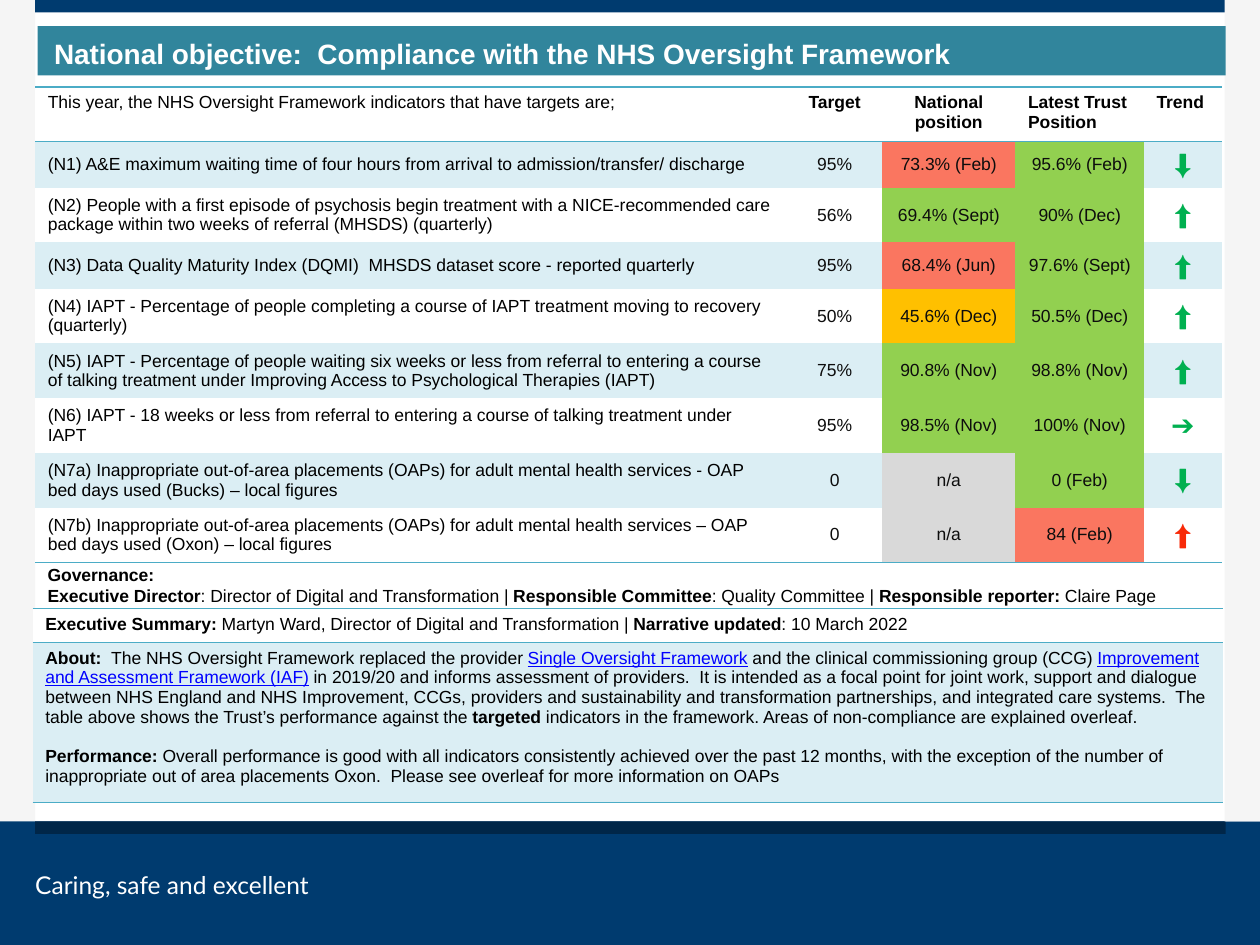
"""Build the oversight framework compliance slide with its indicator and summary tables."""
from lxml import etree
from pptx import Presentation
from pptx.dml.color import RGBColor
from pptx.enum.shapes import MSO_SHAPE
from pptx.enum.text import MSO_ANCHOR, PP_ALIGN
from pptx.oxml import parse_xml
from pptx.oxml.ns import nsdecls, qn
from pptx.util import Cm, Pt

RECTANGLE = MSO_SHAPE.RECTANGLE
TOP, MIDDLE = MSO_ANCHOR.TOP, MSO_ANCHOR.MIDDLE
LEFT, CENTER = PP_ALIGN.LEFT, PP_ALIGN.CENTER
NO_STYLE = "{2D5ABB26-0587-4C30-8999-92F81FD0307C}"

COLORS = {
    "white": "FFFFFF", "black": "000000", "ink": "0D0D0D", "side": "F5F5F5",
    "navy": "003B6F", "dark": "002648", "teal": "31859C", "rule": "4BACC6",
    "band": "DBEEF4", "red": "FA7660", "green": "92D050", "amber": "FFC000",
    "grey": "D9D9D9", "better": "00B050", "worse": "F82A08", "link": "0000FF",
}
FORMATS = {
    "plain": {"name": "Arial", "size": Pt(10), "bold": False, "color": "black"},
    "bold": {"name": "Arial", "size": Pt(10), "bold": True, "color": "black"},
    "value": {"name": "Arial", "size": Pt(10), "bold": False, "color": "ink"},
    "link": {"name": "Arial", "size": Pt(10), "underline": True, "color": "link"},
    "title": {"name": "Arial", "size": Pt(16), "bold": True, "color": "white"},
    "motto": {"name": "Lato", "size": Pt(14), "color": "white"},
    "better": {"name": "Arial", "size": Pt(16), "bold": True, "color": "better"},
    "worse": {"name": "Arial", "size": Pt(16), "bold": True, "color": "worse"},
}
FRAME = [
    ("side", 0, 0, 0.71, 16.56),
    ("navy", 0, 16.56, 25.4, 2.49),
    ("dark", 0.71, 16.56, 24, 0.25),
    ("navy", 0.71, 0, 24, 0.25),
    ("side", 24.69, 0, 0.71, 16.56),
]
TITLE = "National objective:  Compliance with the NHS Oversight Framework"
MOTTO = "Caring, safe and excellent"
HEADER = [
    ("This year, the NHS Oversight Framework indicators that have targets are;", "plain", LEFT),
    ("Target", "bold", CENTER),
    ("National position", "bold", CENTER),
    ("Latest Trust Position", "bold", LEFT),
    ("Trend", "bold", LEFT),
]
INDICATORS = [
    ("(N1) A&E maximum waiting time of four hours from arrival to admission/transfer/ discharge",
     "95%", "73.3% (Feb)", "red", "95.6% (Feb)", "green", "⬇", "better"),
    ("(N2) People with a first episode of psychosis begin treatment with a NICE-recommended care "
     "package within two weeks of referral (MHSDS) (quarterly)",
     "56%", "69.4% (Sept)", "green", "90% (Dec)", "green", "⬆", "better"),
    ("(N3) Data Quality Maturity Index (DQMI)  MHSDS dataset score - reported quarterly",
     "95%", "68.4% (Jun)", "red", "97.6% (Sept)", "green", "⬆", "better"),
    ("(N4) IAPT - Percentage of people completing a course of IAPT treatment moving to recovery "
     "(quarterly)",
     "50%", "45.6% (Dec)", "amber", "50.5% (Dec)", "green", "⬆", "better"),
    ("(N5) IAPT - Percentage of people waiting six weeks or less from referral to entering a course "
     "of talking treatment under Improving Access to Psychological Therapies (IAPT)",
     "75%", "90.8% (Nov)", "green", "98.8% (Nov)", "green", "⬆", "better"),
    ("(N6) IAPT - 18 weeks or less from referral to entering a course of talking treatment under IAPT",
     "95%", "98.5% (Nov)", "green", "100% (Nov)", "green", "➔", "better"),
    ("(N7a) Inappropriate out-of-area placements (OAPs) for adult mental health services - OAP "
     "bed days used (Bucks) – local figures",
     "0", "n/a", "grey", "0 (Feb)", "green", "⬇", "better"),
    ("(N7b) Inappropriate out-of-area placements (OAPs) for adult mental health services – OAP "
     "bed days used (Oxon) – local figures",
     "0", "n/a", "grey", "84 (Feb)", "red", "⬆", "worse"),
]
COLUMNS = [15.16, 1.91, 2.69, 2.59, 1.57]
ONE_LINE, TWO_LINES = 0.93, 1.1
GOVERNANCE = [
    [("Governance:", "bold")],
    [("Executive Director", "bold"), (": Director of Digital and Transformation | ", "plain"),
     ("Responsible Committee", "bold"), (": Quality Committee | ", "plain"),
     ("Responsible reporter: ", "bold"), ("Claire Page", "plain")],
]
SUMMARY = [
    [("Executive Summary: ", "bold"),
     ("Martyn Ward, Director of Digital and Transformation | ", "plain"),
     ("Narrative updated", "bold"), (": 10 March 2022", "plain")],
]
NARRATIVE = [
    [("About:  ", "bold"), ("The NHS Oversight Framework replaced the provider ", "plain"),
     ("Single Oversight Framework", "link"),
     (" and the clinical commissioning group (CCG) ", "plain"),
     ("Improvement and Assessment Framework (IAF)", "link"),
     (" in 2019/20 and informs assessment of providers.  It is intended as a focal point for joint "
      "work, support and dialogue between NHS England and NHS Improvement, CCGs, providers and "
      "sustainability and transformation partnerships, and integrated care systems.  The table "
      "above shows the Trust’s performance against the ", "plain"),
     ("targeted ", "bold"),
     ("indicators in the framework. Areas of non-compliance are explained overleaf.", "plain")],
    [("Performance: ", "bold"),
     ("Overall performance is good with all indicators consistently achieved over the past 12 "
      "months, with the exception of the number of inappropriate out of area placements Oxon.  "
      "Please see overleaf for more information on OAPs", "plain")],
]


def rgb(color):
    return RGBColor.from_string(COLORS[color])


def write(frame, paragraphs, align=LEFT, gap=0):
    for index, spans in enumerate(paragraphs):
        para = frame.add_paragraph() if index else frame.paragraphs[0]
        para.alignment = align
        if index and gap:
            para.space_before = Pt(gap)
        for text, style in spans:
            span = para.add_run()
            span.text = text
            for key, value in FORMATS[style].items():
                if key == "color":
                    span.font.color.rgb = rgb(value)
                else:
                    setattr(span.font, key, value)


def add_bar(page, color, *place):
    bar = page.shapes.add_shape(RECTANGLE, *map(Cm, place))
    bar.shadow.inherit = False
    bar.fill.solid()
    bar.fill.fore_color.rgb = rgb(color)
    bar.line.fill.background()
    return bar


def add_text(page, place, paragraphs, margin=None):
    box = page.shapes.add_textbox(*map(Cm, place))
    frame = box.text_frame
    frame.word_wrap = True
    if margin is not None:
        for side in ("left", "top", "right", "bottom"):
            setattr(frame, f"margin_{side}", Cm(margin))
    write(frame, paragraphs)


def add_grid(page, left, top, widths, heights):
    shape = page.shapes.add_table(len(heights), len(widths), Cm(left), Cm(top),
                                  Cm(sum(widths)), Cm(sum(heights)))
    grid = shape.table
    grid.first_row = grid.horz_banding = False
    grid._tbl.tblPr.find(qn("a:tableStyleId")).text = NO_STYLE
    for column, width in zip(grid.columns, widths):
        column.width = Cm(width)
    for row, height in zip(grid.rows, heights):
        row.height = Cm(height)
    return grid


def fill_cell(cell, paragraphs, color, rules=(), align=LEFT, anchor=TOP, gap=0):
    write(cell.text_frame, paragraphs, align, gap)
    cell.vertical_anchor = anchor
    cell.fill.solid()
    cell.fill.fore_color.rgb = rgb(color)
    properties = cell._tc.get_or_add_tcPr()
    for index, side in enumerate(rules):
        border = parse_xml(f'<a:ln{side} {nsdecls("a")} w="12700"/>')
        solid = etree.SubElement(border, qn("a:solidFill"))
        etree.SubElement(solid, qn("a:srgbClr"), val=COLORS["rule"])
        properties.insert(index, border)


def add_indicators(page):
    heights = [TWO_LINES] + [TWO_LINES if len(row[0]) > 96 else ONE_LINE for row in INDICATORS]
    grid = add_grid(page, 0.71, 1.75, COLUMNS, heights)
    for column, (text, style, align) in enumerate(HEADER):
        fill_cell(grid.cell(0, column), [[(text, style)]], "white", "TB", align)
    for number, row in enumerate(INDICATORS, 1):
        name, target, national, national_color, trust, trust_color, arrow, trend = row
        band = "band" if number % 2 else "white"
        rules = "B" if number == len(INDICATORS) else ""
        cells = [(name, "plain", band), (target, "value", band),
                 (national, "value", national_color), (trust, "value", trust_color),
                 (arrow, trend, band)]
        for column, (text, style, color) in enumerate(cells):
            align = CENTER if column else LEFT
            fill_cell(grid.cell(number, column), [[(text, style)]], color, rules, align, MIDDLE)


def main():
    deck = Presentation()
    deck.slide_width, deck.slide_height = Cm(25.4), Cm(19.05)
    page = deck.slides.add_slide(deck.slide_layouts[6])
    for bar in FRAME:
        add_bar(page, *bar)
    add_text(page, (0.71, 17.53, 7.8, 0.61), [[(MOTTO, "motto")]], 0)
    title = add_bar(page, "teal", 0.76, 0.53, 23.95, 0.99).text_frame
    title.word_wrap = True
    title.vertical_anchor = MIDDLE
    title.margin_left, title.margin_right = Cm(0.33), Cm(0.18)
    title.margin_top = title.margin_bottom = Cm(0.1)
    write(title, [[(TITLE, "title")]])
    title.paragraphs[0].line_spacing = 1.15
    add_text(page, (0.71, 11.25, 23.95, 1.12), GOVERNANCE)
    add_indicators(page)
    summary = add_grid(page, 0.66, 12.27, [24], [0.67, 3.23])
    fill_cell(summary.cell(0, 0), SUMMARY, "white", "TB")
    fill_cell(summary.cell(1, 0), NARRATIVE, "band", "TB", gap=11.5)
    deck.save("out.pptx")


if __name__ == "__main__":
    main()
